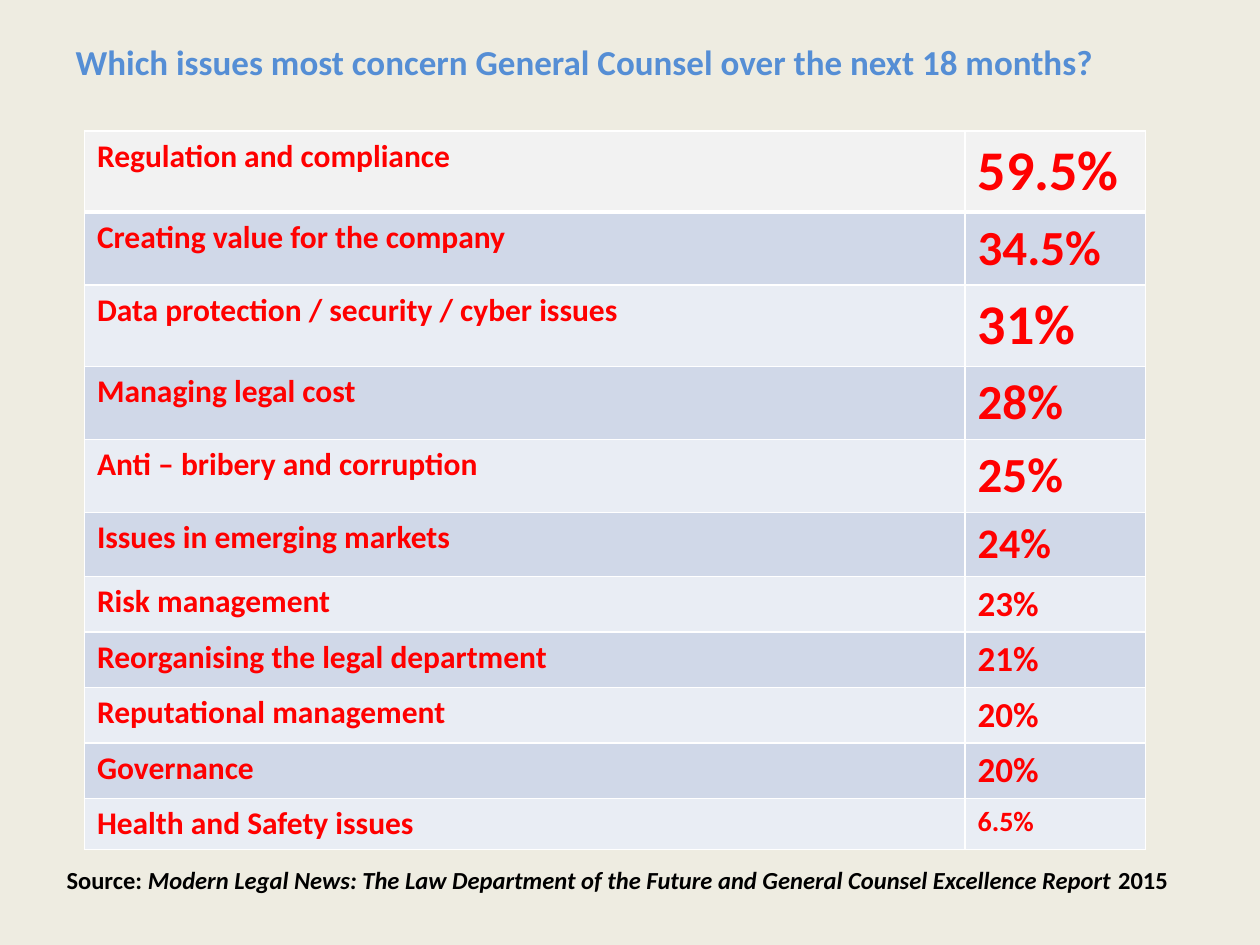
import pptx
import pptx.util
import pptx.dml.color
import pptx.enum.text
import pptx.oxml
import pptx.oxml.ns
from pptx.util import Inches, Pt
from pptx.dml.color import RGBColor

# Content: issue, share, size of the share in points
TITLE = "Which issues most concern General Counsel over the next 18 months?"
ISSUES = [
    ("Regulation and compliance", "59.5%", 32),
    ("Creating value for the company", "34.5%", 28),
    ("Data protection / security / cyber issues", "31%", 32),
    ("Managing legal cost", "28%", 28),
    ("Anti – bribery and corruption", "25%", 28),
    ("Issues in emerging markets", "24%", 24),
    ("Risk management", "23%", 20),
    ("Reorganising the legal department", "21%", 20),
    ("Reputational management", "20%", 20),
    ("Governance", "20%", 20),
    ("Health and Safety issues", "6.5%", 16),
]
SOURCE = [
    ("Source: ", False),
    ("Modern Legal News: The Law Department of the Future and "
     "General Counsel Excellence Report ", True),
    ("2015", False),
]

# Style
FONT = "Calibri"
CREAM = RGBColor(0xEE, 0xEC, 0xE1)
BLUE = RGBColor(0x55, 0x8E, 0xD5)
RED = RGBColor(0xFF, 0x00, 0x00)
BLACK = RGBColor(0x00, 0x00, 0x00)
HEADER = RGBColor(0xF2, 0xF2, 0xF2)
BANDS = [RGBColor(0xE9, 0xED, 0xF4), RGBColor(0xD0, 0xD8, 0xE8)]
COLUMNS = [6.99, 1.43]
ROW_HEIGHT = {32: 0.64, 28: 0.58, 24: 0.5, 20: 0.44, 16: 0.4}
ISSUE_SIZE = 18


def add_run(p, text, size, color, italic=False):
    r = p.add_run()
    r.text = text
    r.font.name = FONT
    r.font.size = Pt(size)
    r.font.bold = True
    r.font.italic = italic
    r.font.color.rgb = color


def add_borders(cell, bottom):
    tcPr = cell._tc.get_or_add_tcPr()
    for side, width in (("L", 1), ("R", 1), ("T", 1), ("B", bottom)):
        tcPr.append(pptx.oxml.parse_xml(
            f'<a:ln{side} {pptx.oxml.ns.nsdecls("a")} w="{Pt(width)}"><a:solidFill>'
            f'<a:srgbClr val="FFFFFF"/></a:solidFill></a:ln{side}>'))


prs = pptx.Presentation()
prs.slide_width, prs.slide_height = Inches(10), Inches(7.5)
s = prs.slides.add_slide(prs.slide_layouts[5])
s.background.fill.solid()
s.background.fill.fore_color.rgb = CREAM

# Title
sp = s.shapes.title
sp.left, sp.top, sp.width, sp.height = map(Inches, (0.5, 0.3, 9, 0.38))
tf = sp.text_frame
tf.vertical_anchor = pptx.enum.text.MSO_ANCHOR.MIDDLE
p = tf.paragraphs[0]
p.alignment = pptx.enum.text.PP_ALIGN.LEFT
add_run(p, TITLE, 20, BLUE)

# Table of issues
heights = [ROW_HEIGHT[size] for _, _, size in ISSUES]
table = s.shapes.add_table(len(ISSUES), len(COLUMNS), Inches(0.67), Inches(1.04),
                           Inches(sum(COLUMNS)), Inches(sum(heights))).table
for column, width in zip(table.columns, COLUMNS):
    column.width = Inches(width)
for i, (issue, share, size) in enumerate(ISSUES):
    table.rows[i].height = Inches(heights[i])
    for j, (text, points) in enumerate([(issue, ISSUE_SIZE), (share, size)]):
        cell = table.cell(i, j)
        add_borders(cell, 3 if i == 0 else 1)
        cell.fill.solid()
        cell.fill.fore_color.rgb = HEADER if i == 0 else BANDS[i % 2]
        add_run(cell.text_frame.paragraphs[0], text, points, RED)

# Source line
tf = s.shapes.add_textbox(Inches(0.43), Inches(6.82), Inches(9.06), Inches(0.34)).text_frame
tf.word_wrap = True
tf.auto_size = pptx.enum.text.MSO_AUTO_SIZE.SHAPE_TO_FIT_TEXT
for text, italic in SOURCE:
    add_run(tf.paragraphs[0], text, 14, BLACK, italic)

prs.save("out.pptx")
